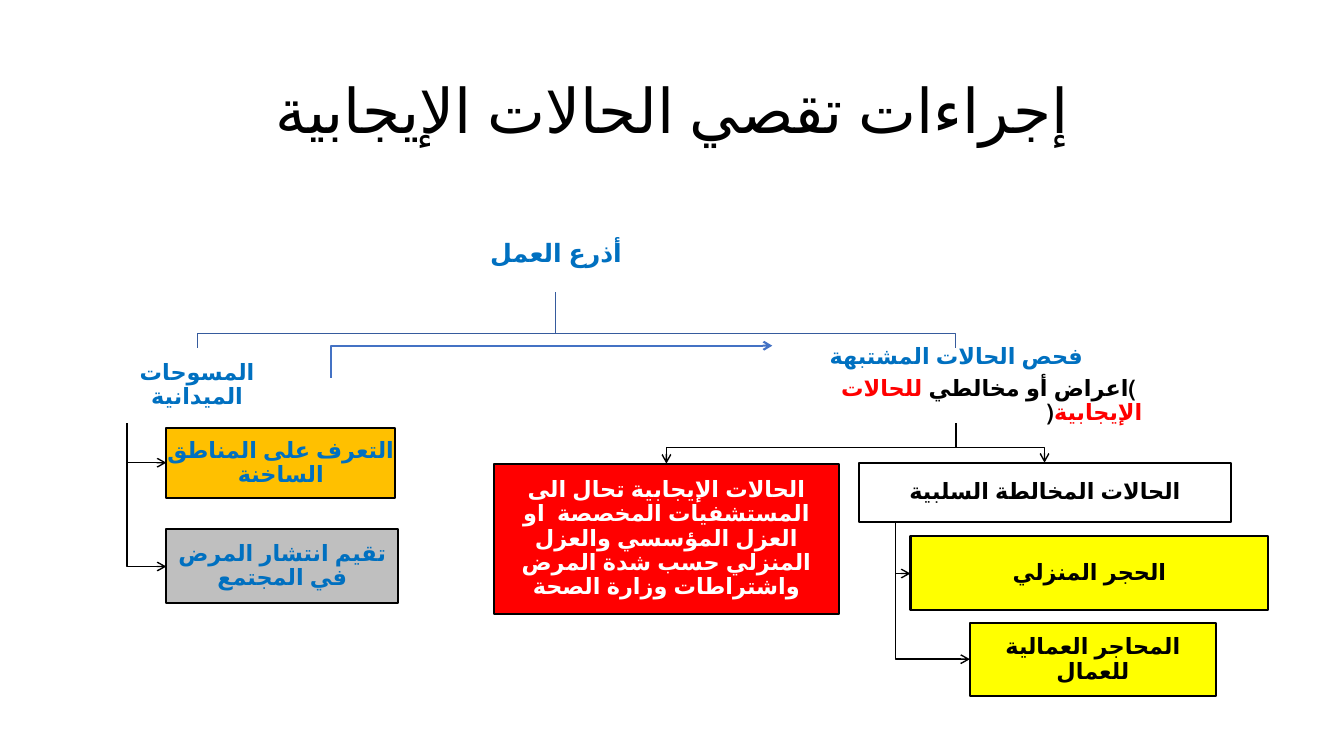
"""Builds the slide on procedures for tracing positive cases."""
from dataclasses import dataclass
from typing import Optional

from lxml.etree import SubElement
from pptx import Presentation
from pptx.dml.color import RGBColor
from pptx.enum.lang import MSO_LANGUAGE_ID as Language
from pptx.enum.shapes import MSO_CONNECTOR as Connector, MSO_SHAPE as Preset
from pptx.enum.text import MSO_ANCHOR as Anchor, PP_ALIGN as Align
from pptx.oxml.ns import qn
from pptx.util import Emu, Pt

SCALE = 9144
FONT = "Calibri"
BLACK, WHITE, BLUE, RED = "000000", "FFFFFF", "0070C0", "FF0000"
YELLOW, ORANGE, GREY = "FFFF00", "FFC000", "BFBFBF"
TRUNK, ACCENT = "365B9D", "4472C4"


@dataclass(frozen=True)
class Run:
    text: str
    color: str


@dataclass(frozen=True)
class Line:
    runs: tuple[Run, ...]
    align: Align = Align.CENTER


@dataclass(frozen=True)
class Box:
    left: int
    top: int
    width: int
    height: int
    lines: tuple[Line, ...]
    fill: Optional[str] = None
    border: str = BLACK
    border_pt: float = 1.5
    size: int = 16


@dataclass(frozen=True)
class Branch:
    start: tuple[int, int]
    end: tuple[int, int]
    bend: Optional[int] = None
    color: str = BLACK
    arrow: bool = True


def px(length: int) -> Emu:
    """Turn whole pixels into EMU."""
    return Emu(length * SCALE)


def rgb(color: str) -> RGBColor:
    """Turn a hex string into a colour."""
    return RGBColor.from_string(color)


def label(text: str, color: str) -> tuple[Line, ...]:
    """Make a centred label of one run."""
    return (Line((Run(text, color),)),)


def write(frame, lines: tuple[Line, ...], size: int, bold: bool, gap: float) -> None:
    """Fill a text frame with right-to-left paragraphs."""
    frame.word_wrap = True
    frame.vertical_anchor = Anchor.MIDDLE
    for index, line in enumerate(lines):
        paragraph = frame.add_paragraph() if index else frame.paragraphs[0]
        paragraph.alignment = line.align
        paragraph.line_spacing = 0.9
        paragraph.space_after = Pt(size * gap)
        paragraph._p.get_or_add_pPr().set("rtl", "1")
        for part in line.runs:
            run = paragraph.add_run()
            run.text = part.text
            run.font.size = Pt(size)
            run.font.bold = bold
            run.font.name = FONT
            run.font.language_id = Language.ARABIC
            run.font.color.rgb = rgb(part.color)


def style_line(line, color: str, width: float, arrow: bool) -> None:
    """Set colour, width and arrowhead of a line."""
    line.color.rgb = rgb(color)
    line.width = Pt(width)
    if arrow:
        SubElement(line._get_or_add_ln(), qn("a:tailEnd"), type="arrow")


def draw_title(slide, text: str) -> None:
    """Write the slide title."""
    title = slide.shapes.add_textbox(px(92), px(40), px(1150), px(145))
    write(title.text_frame, label(text, BLACK), 44, False, 0)


def draw_branch(slide, branch: Branch) -> None:
    """Draw a right-angled branch of the tree."""
    (start_x, start_y), (end_x, end_y) = branch.start, branch.end
    if branch.bend is None:
        corners = [(start_x, end_y)]
    else:
        corners = [(start_x, branch.bend), (end_x, branch.bend)]
    builder = slide.shapes.build_freeform(start_x, start_y, scale=float(SCALE))
    builder.add_line_segments([*corners, branch.end], close=False)
    path_shape = builder.convert_to_shape()
    path_shape.shadow.inherit = False
    path_shape.fill.background()
    style_line(path_shape.line, branch.color, 1, branch.arrow)


def draw_box(slide, box: Box) -> None:
    """Draw a labelled rectangle."""
    rect = slide.shapes.add_shape(
        Preset.RECTANGLE, px(box.left), px(box.top), px(box.width), px(box.height))
    rect.shadow.inherit = False
    if box.fill:
        rect.fill.solid()
        rect.fill.fore_color.rgb = rgb(box.fill)
    else:
        rect.fill.background()
    style_line(rect.line, box.border, box.border_pt, False)
    frame = rect.text_frame
    frame.margin_left = frame.margin_right = px(1)
    frame.margin_top = frame.margin_bottom = px(1)
    write(frame, box.lines, box.size, True, 0.35)


def draw_survey_arrow(slide) -> None:
    """Draw the elbow arrow from field surveys to suspected cases."""
    arrow = slide.shapes.add_connector(Connector.ELBOW, px(328), px(375), px(766), px(343))
    style_line(arrow.line, ACCENT, 1.5, True)
    properties = arrow._element.spPr
    SubElement(properties, qn("a:effectLst"))
    guides = properties.find(qn("a:prstGeom")).get_or_add_avLst()
    SubElement(guides, qn("a:gd"), name="adj1", fmla="val 0")


ROOT, SUSPECTED, SURVEYS, NEGATIVE = (551, 290), (948, 420), (126, 420), (888, 518)

BRANCHES = (
    Branch(NEGATIVE, (962, 654)),
    Branch(NEGATIVE, (903, 569)),
    Branch(SUSPECTED, (1036, 459), 444),
    Branch(SUSPECTED, (661, 460), 444),
    Branch(ROOT, (948, 346), 331, TRUNK, False),
    Branch(SURVEYS, (165, 562)),
    Branch(SURVEYS, (165, 459)),
    Branch(ROOT, (196, 346), 331, TRUNK, False),
)

SUSPECTED_LINES = label("فحص الحالات المشتبهة", BLUE) + (
    Line((Run(" )اعراض أو مخالطي ", BLACK), Run("للحالات الإيجابية", RED), Run("(", BLACK)),
         Align.RIGHT),
)

BOXES = (
    Box(478, 216, 147, 73, label("أذرع العمل", BLUE), None, WHITE, 1, 18),
    Box(108, 346, 175, 73, label("المسوحات الميدانية", BLUE), None, WHITE, 1),
    Box(165, 425, 227, 69, label("التعرف على المناطق الساخنة", BLUE), ORANGE),
    Box(165, 525, 230, 73, label("تقيم انتشار المرض في المجتمع", BLUE), GREY),
    Box(763, 346, 371, 73, SUSPECTED_LINES, None, WHITE, 1),
    Box(490, 460, 342, 149, label(
        "الحالات الإيجابية تحال الى المستشفيات المخصصة  او العزل المؤسسي "
        "والعزل المنزلي حسب شدة المرض واشتراطات وزارة الصحة", WHITE), RED),
    Box(852, 459, 369, 59, label("الحالات المخالطة السلبية", BLACK)),
    Box(903, 532, 355, 73, label("الحجر المنزلي", BLACK), YELLOW),
    Box(962, 618, 244, 73, label("المحاجر العمالية للعمال", BLACK), YELLOW),
)


def main() -> None:
    """Build and save the slide."""
    deck = Presentation()
    deck.slide_width, deck.slide_height = px(1333), px(750)
    slide = deck.slides.add_slide(deck.slide_layouts[6])
    draw_title(slide, "إجراءات تقصي الحالات الإيجابية")
    for branch in BRANCHES:
        draw_branch(slide, branch)
    for box in BOXES:
        draw_box(slide, box)
    draw_survey_arrow(slide)
    deck.save("out.pptx")


if __name__ == "__main__":
    main()
